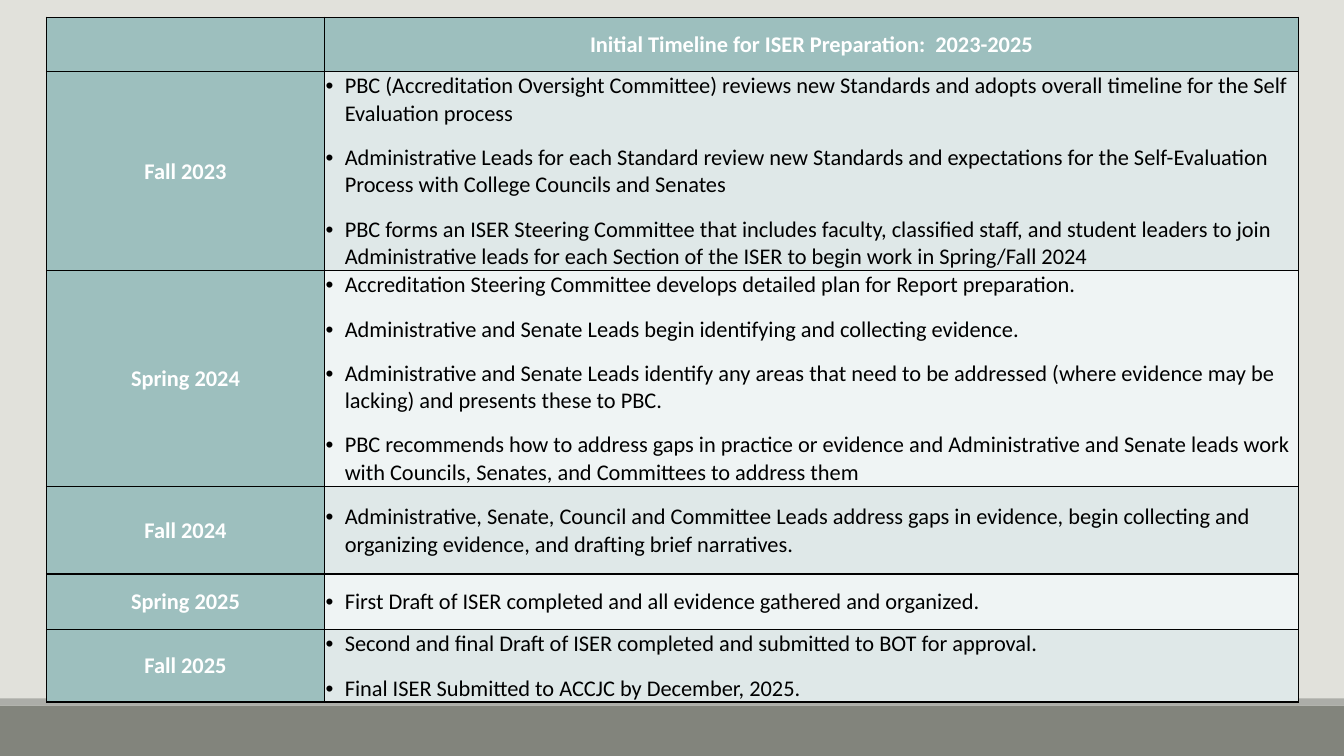
from lxml import etree
from pptx import Presentation
from pptx import util as u
from pptx.dml.color import RGBColor
from pptx.enum import shapes, text
from pptx.oxml import ns

LABEL_FILL = "9DBFBE"
BAND_FILLS = ["DFE8E8", "EFF4F4"]
TITLE = "Initial Timeline for ISER Preparation:  2023-2025"
HEADER_HEIGHT = 0.54
TERMS = [
    ("Fall 2023", 1.31, [
        "PBC (Accreditation Oversight Committee) reviews new Standards and adopts overall timeline for the Self Evaluation process",
        "Administrative Leads for each Standard review new Standards and expectations for the Self-Evaluation Process with College Councils and Senates",
        "PBC forms an ISER Steering Committee that includes faculty, classified staff, and student leaders to join Administrative leads for each Section of the ISER to begin work in Spring/Fall 2024",
    ]),
    ("Spring 2024", 1.94, [
        "Accreditation Steering Committee develops detailed plan for Report preparation.",
        "Administrative and Senate Leads begin identifying and collecting evidence.",
        "Administrative and Senate Leads identify any areas that need to be addressed (where evidence may be lacking) and presents these to PBC.",
        "PBC recommends how to address gaps in practice or evidence and Administrative and Senate leads work with Councils, Senates, and Committees to address them",
    ]),
    ("Fall 2024", 0.87, [
        "Administrative, Senate, Council and Committee Leads address gaps in evidence, begin collecting and organizing evidence, and drafting brief narratives.",
    ]),
    ("Spring 2025", 0.55, [
        "First Draft of ISER completed and all evidence gathered and organized.",
    ]),
    ("Fall 2025", 0.65, [
        "Second and final Draft of ISER completed and submitted to BOT for approval.",
        "Final ISER Submitted to ACCJC by December, 2025.",
    ]),
]


def paint(fill, color):
    """Give a fill one solid colour from a hex string."""
    fill.solid()
    fill.fore_color.rgb = RGBColor.from_string(color)


def add_band(page, left, top, width, height, color):
    """Draw a plain rectangle in the given box."""
    band = page.shapes.add_shape(
        shapes.MSO_SHAPE.RECTANGLE, *map(u.Inches, (left, top, width, height)))
    band.shadow.inherit = False
    paint(band.fill, color)
    band.line.fill.background()


def add_footer(page, left, top, width, height):
    """Draw the footer bar with its lighter strip on top."""
    strip = 0.07
    add_band(page, left, top + strip, width, height - strip, "82847C")
    add_band(page, left, top, width, strip, "ACADA8")


def style_cell(cell, color):
    """Set the fill, margins, anchor and black borders of a cell."""
    paint(cell.fill, color)
    cell.vertical_anchor = text.MSO_ANCHOR.MIDDLE
    cell.margin_left = cell.margin_right = cell.margin_top = u.Inches(0.01)
    cell.margin_bottom = 0
    properties = cell._tc.get_or_add_tcPr()
    for index, side in enumerate(["lnL", "lnR", "lnT", "lnB"]):
        border = etree.Element(ns.qn("a:" + side), w=str(u.Pt(1)))
        solid = etree.SubElement(border, ns.qn("a:solidFill"))
        etree.SubElement(solid, ns.qn("a:srgbClr"), val="000000")
        properties.insert(index, border)


def set_font(para, color, bold):
    """Set the table font on a paragraph."""
    para.font.name = "Calibri"
    para.font.size = u.Pt(16)
    para.font.bold = bold
    para.font.color.rgb = RGBColor.from_string(color)


def write_label(cell, label):
    """Write a centred white heading in a cell."""
    style_cell(cell, LABEL_FILL)
    para = cell.text_frame.paragraphs[0]
    para.text = label
    para.alignment = text.PP_ALIGN.CENTER
    set_font(para, "FFFFFF", True)


def write_tasks(cell, tasks, color):
    """Write a bulleted list of tasks in a cell."""
    style_cell(cell, color)
    cell.text_frame.text = "\n".join(tasks)
    for para in cell.text_frame.paragraphs:
        para.space_before = para.space_after = u.Pt(6)
        properties = para._p.get_or_add_pPr()
        properties.set("marL", str(u.Inches(0.19)))
        properties.set("indent", str(u.Inches(-0.19)))
        etree.SubElement(properties, ns.qn("a:buFont"), typeface="Arial")
        etree.SubElement(properties, ns.qn("a:buChar"), char="•")
        set_font(para, "000000", False)


def add_timeline(page, left, top, width, height):
    """Place the timeline table in the given box."""
    label_width = 2.76
    table = page.shapes.add_table(
        len(TERMS) + 1, 2, *map(u.Inches, (left, top, width, height))).table
    table.columns[0].width = u.Inches(label_width)
    table.columns[1].width = u.Inches(width - label_width)
    table.rows[0].height = u.Inches(HEADER_HEIGHT)
    style_cell(table.cell(0, 0), LABEL_FILL)
    write_label(table.cell(0, 1), TITLE)
    for row, (term, row_height, tasks) in enumerate(TERMS, 1):
        table.rows[row].height = u.Inches(row_height)
        write_label(table.cell(row, 0), term)
        write_tasks(table.cell(row, 1), tasks, BAND_FILLS[(row - 1) % 2])


def main():
    """Build the slide and save the deck."""
    deck = Presentation()
    deck.slide_width, deck.slide_height = u.Inches(13.33), u.Inches(7.5)
    page = deck.slides.add_slide(deck.slide_layouts[6])
    paint(page.background.fill, "E1E1DB")
    add_footer(page, 0, 6.93, 13.33, 0.57)
    table_height = HEADER_HEIGHT + sum(term[1] for term in TERMS)
    add_timeline(page, 0.46, 0.17, 12.42, table_height)
    deck.save("out.pptx")


if __name__ == "__main__":
    main()
